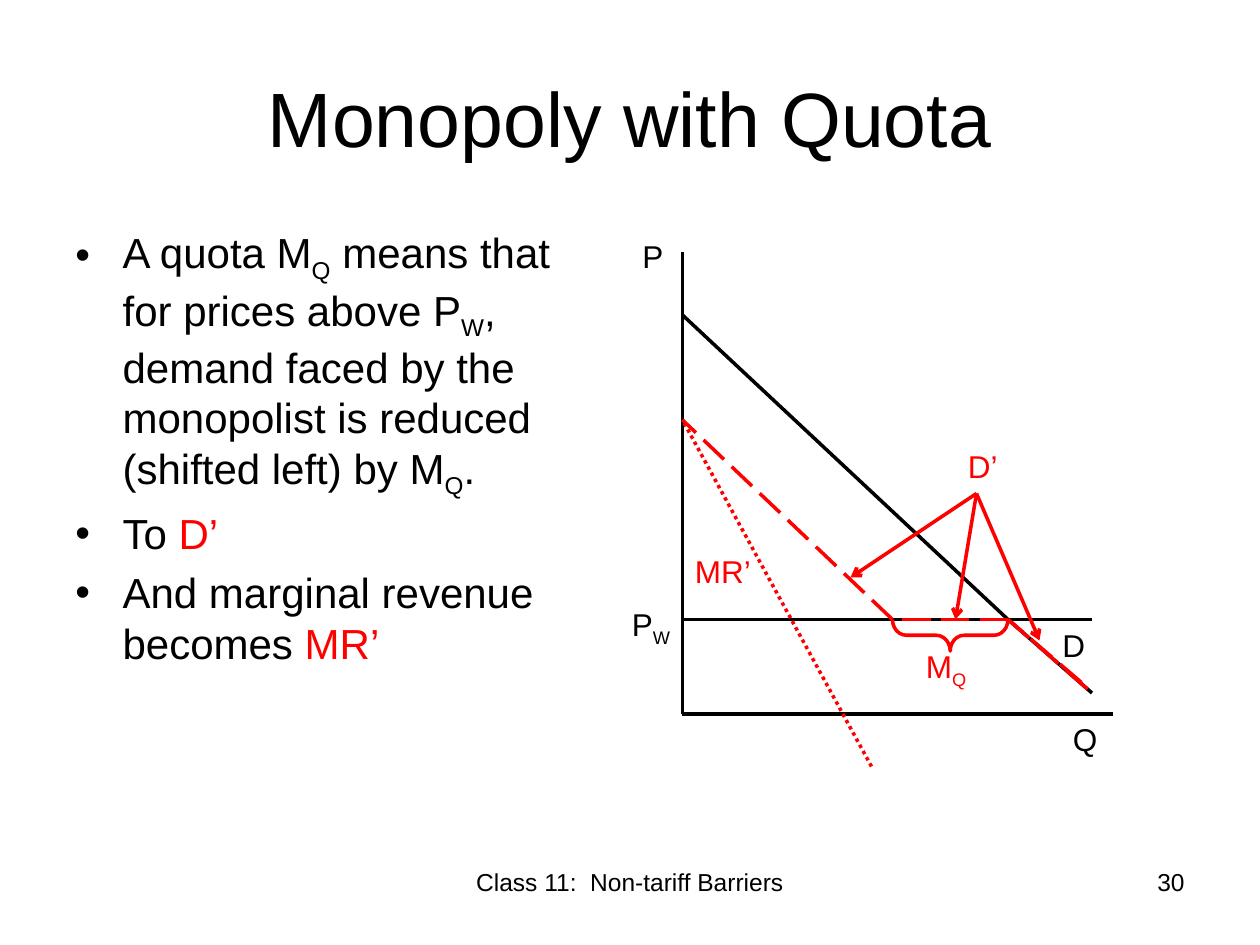
from lxml import etree
from pptx import Presentation
from pptx.dml.color import RGBColor
from pptx.enum.dml import MSO_LINE
from pptx.enum.shapes import MSO_CONNECTOR, MSO_SHAPE
from pptx.enum.text import MSO_ANCHOR, MSO_AUTO_SIZE, PP_ALIGN
from pptx.oxml.ns import qn
from pptx.util import Emu, Pt

PX = 7620  # EMU: 120 px to the inch
BLACK, RED = "000000", "FF0000"
DASH, DOT = MSO_LINE.LONG_DASH, MSO_LINE.ROUND_DOT

# A span is (text, colour, is subscript)
TITLE = [("Monopoly with Quota", BLACK, False)]
FOOTER = [("Class 11:  Non-tariff Barriers", BLACK, False)]
NUMBER = [("30", BLACK, False)]
BULLETS = [
    [("A quota M", BLACK, False), ("Q", BLACK, True),
     (" means that for prices above P", BLACK, False), ("W", BLACK, True),
     (", demand faced by the monopolist is reduced (shifted left) by M", BLACK, False),
     ("Q", BLACK, True), (".", BLACK, False)],
    [("To ", BLACK, False), ("D’", RED, False)],
    [("And marginal revenue becomes ", BLACK, False), ("MR’", RED, False)],
]

# Points of the diagram
ORIGIN = (650, 680)
PRICE_TOP, QUANTITY_END = (650, 240), (1060, 680)
WORLD_PRICE, WORLD_PRICE_END = (650, 590), (1040, 590)
DEMAND_TOP, DEMAND_AT_PW, DEMAND_END = (650, 300), (960, 590), (1040, 660)
QUOTA_TOP, QUOTA_AT_PW = (650, 400), (850, 590)
MR_END = (830, 730)
ARROW_START = (930, 470)
ARROW_TIPS = [(810, 550), (910, 590), (990, 610)]

LINES = [  # start, end, colour, dash
    (ORIGIN, QUANTITY_END, BLACK, None),
    (ORIGIN, PRICE_TOP, BLACK, None),
    (DEMAND_AT_PW, DEMAND_TOP, BLACK, None),
    (DEMAND_AT_PW, DEMAND_END, BLACK, None),
    (WORLD_PRICE, WORLD_PRICE_END, BLACK, None),
    (QUOTA_AT_PW, QUOTA_TOP, RED, DASH),
    (DEMAND_AT_PW, QUOTA_AT_PW, RED, DASH),
    ((1030, 650), DEMAND_AT_PW, RED, DASH),
    (DEMAND_AT_PW, DEMAND_END, RED, DASH),
    (MR_END, QUOTA_TOP, RED, DOT),
]
BRACE = (890, 550, 30, 110)
LABELS = [  # left, top, width, spans
    (600, 220, 90, [("P", BLACK, False)]),
    (1000, 590, 90, [("D", BLACK, False)]),
    (590, 570, 90, [("P", BLACK, False), ("W", BLACK, True)]),
    (870, 610, 65, [("M", RED, False), ("Q", RED, True)]),
    (910, 420, 90, [("D’", RED, False)]),
    (650, 520, 90, [("MR’", RED, False)]),
    (1010, 680, 90, [("Q", BLACK, False)]),
]
LABEL_HEIGHT = 48


def px(*lengths):
    return [Emu(length * PX) for length in lengths]


def rgb(colour):
    return RGBColor.from_string(colour)


def add_text(page, area, paras, size, align=PP_ALIGN.LEFT, anchor=MSO_ANCHOR.TOP):
    box = page.shapes.add_textbox(*px(*area))
    frame = box.text_frame
    frame.word_wrap = True
    frame.vertical_anchor = anchor
    for index, spans in enumerate(paras):
        para = frame.add_paragraph() if index else frame.paragraphs[0]
        para.alignment = align
        for text, colour, subscript in spans:
            span = para.add_run()
            span.text = text
            span.font.name = "Arial"
            span.font.size = Pt(size)
            span.font.color.rgb = rgb(colour)
            if subscript:
                span.font._element.set("baseline", "-25000")
    return frame


def add_bullet(para, indent):
    para.space_before = Pt(4.8)
    properties = para._p.get_or_add_pPr()
    properties.set("marL", str(indent * PX))
    properties.set("indent", str(-indent * PX))
    etree.SubElement(properties, qn("a:buFont"), typeface="Arial")
    etree.SubElement(properties, qn("a:buChar"), char="•")


def add_line(page, start, end, colour, dash=None, arrow=False):
    connector = page.shapes.add_connector(MSO_CONNECTOR.STRAIGHT, *px(*start, *end))
    connector.line.color.rgb = rgb(colour)
    connector.line.width = Pt(2)
    if dash:
        connector.line.dash_style = dash
    if arrow:
        etree.SubElement(connector.line._get_or_add_ln(), qn("a:tailEnd"), type="arrow")
    etree.SubElement(connector._element.spPr, qn("a:effectLst"))


def add_brace(page):
    brace = page.shapes.add_shape(MSO_SHAPE.LEFT_BRACE, *px(*BRACE))
    brace.rotation = 270
    brace.adjustments[0] = 0.44
    brace.shadow.inherit = False
    brace.fill.background()
    brace.line.color.rgb = rgb(RED)
    brace.line.width = Pt(2)


def main():
    deck = Presentation()
    deck.slide_width, deck.slide_height = px(1200, 900)
    page = deck.slides.add_slide(deck.slide_layouts[6])

    add_text(page, (60, 36, 1080, 150), [TITLE], 44, PP_ALIGN.CENTER, MSO_ANCHOR.MIDDLE)
    body = add_text(page, (60, 210, 490, 594), BULLETS, 24)
    for para in body.paragraphs:
        add_bullet(para, 45)

    for start, end, colour, dash in LINES:
        add_line(page, start, end, colour, dash)
    for tip in ARROW_TIPS:
        add_line(page, ARROW_START, tip, RED, arrow=True)
    add_brace(page)
    for left, top, width, spans in LABELS:
        label = add_text(page, (left, top, width, LABEL_HEIGHT), [spans], 18)
        label.auto_size = MSO_AUTO_SIZE.SHAPE_TO_FIT_TEXT

    add_text(page, (410, 820, 380, 62), [FOOTER], 14, PP_ALIGN.CENTER)
    add_text(page, (860, 820, 280, 62), [NUMBER], 14, PP_ALIGN.RIGHT)
    deck.save("out.pptx")


if __name__ == "__main__":
    main()
